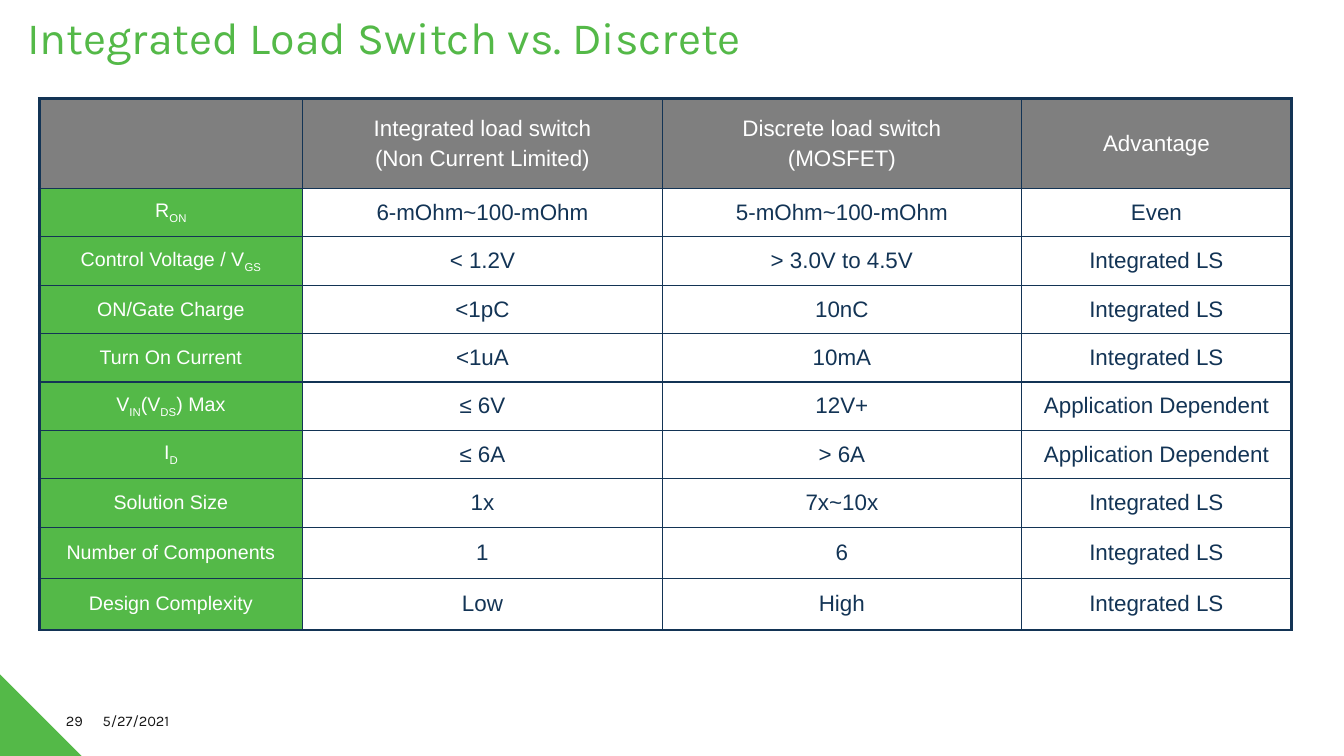
from lxml.etree import SubElement
from pptx import Presentation
from pptx.dml.color import RGBColor
from pptx.enum.text import MSO_ANCHOR, PP_ALIGN
from pptx.oxml.ns import qn
from pptx.util import Inches, Pt

COLORS = {
    "green": "54B948",
    "navy": "133455",
    "gray": "7F7F7F",
    "white": "FFFFFF",
    "ink": "181818",
}
COLUMN_WIDTHS = [2.61, 3.57, 3.56, 2.68]
ROW_HEIGHTS = [0.89] + [0.48] * 7 + [0.51] * 2
COMPARISON = [
    ["", "Integrated load switch\n(Non Current Limited)", "Discrete load switch\n(MOSFET)", "Advantage"],
    ["R|ON", "6-mOhm~100-mOhm", "5-mOhm~100-mOhm", "Even"],
    ["Control Voltage / V|GS", "< 1.2V", "> 3.0V to 4.5V", "Integrated LS"],
    ["ON/Gate Charge", "<1pC", "10nC", "Integrated LS"],
    ["Turn On Current", "<1uA", "10mA", "Integrated LS"],
    ["V|IN|(V|DS|) Max", "≤ 6V", "12V+", "Application Dependent"],
    ["I|D", "≤ 6A", "> 6A", "Application Dependent"],
    ["Solution Size", "1x", "7x~10x", "Integrated LS"],
    ["Number of Components", "1", "6", "Integrated LS"],
    ["Design Complexity", "Low", "High", "Integrated LS"],
]


def rgb(name):
    """Return the palette colour with this name."""
    return RGBColor.from_string(COLORS[name])


class SlideBuilder:
    """Hold the style and the current slide."""

    heading_font = "Karla"
    table_font = "Arial"

    def __init__(self, deck):
        """Add a title-only slide to the deck."""
        self.slide = deck.slides.add_slide(deck.slide_layouts[5])

    def set_text(self, frame, text, font, size, color, align, **spacing):
        """Set lines of text, with every second part between bars as subscript."""
        frame.vertical_anchor = MSO_ANCHOR.MIDDLE
        for index, line in enumerate(text.split("\n")):
            paragraph = frame.add_paragraph() if index else frame.paragraphs[0]
            layout = {"alignment": align, **spacing}
            if index:
                layout["space_before"] = Pt(size * 0.2)
            for name, value in layout.items():
                setattr(paragraph, name, value)
            for part, words in enumerate(line.split("|")):
                run = paragraph.add_run()
                run.text = words
                for name, value in {"name": font, "size": Pt(size), "bold": False}.items():
                    setattr(run.font, name, value)
                run.font.color.rgb = rgb(color)
                if part % 2:
                    run.font._element.set("baseline", "-25000")

    def corner(self, size):
        """Draw the triangle in the lower left corner."""
        bottom = Inches(7.5)
        outline = self.slide.shapes.build_freeform(0, bottom - Inches(size))
        outline.add_line_segments([(Inches(size), bottom), (0, bottom)])
        triangle = outline.convert_to_shape()
        triangle.shadow.inherit = False
        triangle.fill.solid()
        triangle.fill.fore_color.rgb = rgb("green")
        triangle.line.fill.background()

    def title(self, text, left, top, width, height):
        """Place and format the title placeholder."""
        heading = self.slide.shapes.title
        place = {"left": left, "top": top, "width": width, "height": height}
        for name, value in place.items():
            setattr(heading, name, Inches(value))
        heading.text_frame.word_wrap = True
        self.set_text(heading.text_frame, text, self.heading_font, 32, "green", PP_ALIGN.LEFT, line_spacing=0.9)

    def footer(self, text, left, width, align):
        """Add a small text at the foot of the slide."""
        box = self.slide.shapes.add_textbox(Inches(left), Inches(6.95), Inches(width), Inches(0.4))
        box.text_frame.word_wrap = True
        self.set_text(box.text_frame, text, self.heading_font, 10.5, "ink", align)

    def borders(self, cell, outer):
        """Rule the four sides of a cell, heavier on the outer edges."""
        properties = cell._tc.get_or_add_tcPr()
        for side in "LRTB":
            width = Pt(2.25 if outer[side] else 1)
            line = SubElement(properties, qn("a:ln" + side), w=str(width))
            fill = SubElement(line, qn("a:solidFill"))
            SubElement(fill, qn("a:srgbClr"), val=COLORS["navy"])

    def table(self, rows, widths, heights, left, top):
        """Add the ruled table with a header row and a label column."""
        last_row, last_column = len(rows) - 1, len(widths) - 1
        grid = self.slide.shapes.add_table(
            len(rows), len(widths), Inches(left), Inches(top), Inches(sum(widths)), Inches(sum(heights))
        ).table
        grid.first_row = grid.horz_banding = False
        for column, width in zip(grid.columns, widths):
            column.width = Inches(width)
        for r, (row, height) in enumerate(zip(rows, heights)):
            grid.rows[r].height = Inches(height)
            for c, text in enumerate(row):
                cell = grid.cell(r, c)
                self.borders(cell, {"L": c == 0, "R": c == last_column, "T": r == 0, "B": r == last_row})
                if r == 0:
                    background, color, size = "gray", "white", 16
                elif c == 0:
                    background, color, size = "green", "white", 14
                else:
                    background, color, size = "white", "navy", 16
                cell.fill.solid()
                cell.fill.fore_color.rgb = rgb(background)
                cell.vertical_anchor = MSO_ANCHOR.MIDDLE
                if text:
                    self.set_text(cell.text_frame, text, self.table_font, size, color, PP_ALIGN.CENTER)


def main():
    """Build the load switch comparison slide."""
    deck = Presentation()
    deck.slide_width, deck.slide_height = Inches(13.33), Inches(7.5)
    builder = SlideBuilder(deck)
    builder.corner(0.81)
    builder.title("Integrated Load Switch vs. Discrete", 0.17, -0.02, 9, 0.83)
    builder.table(COMPARISON, COLUMN_WIDTHS, ROW_HEIGHTS, 0.39, 0.98)
    builder.footer("5/27/2021", 0.92, 3, PP_ALIGN.LEFT)
    builder.footer("29", 0.19, 0.73, PP_ALIGN.RIGHT)
    deck.save("out.pptx")


if __name__ == "__main__":
    main()
